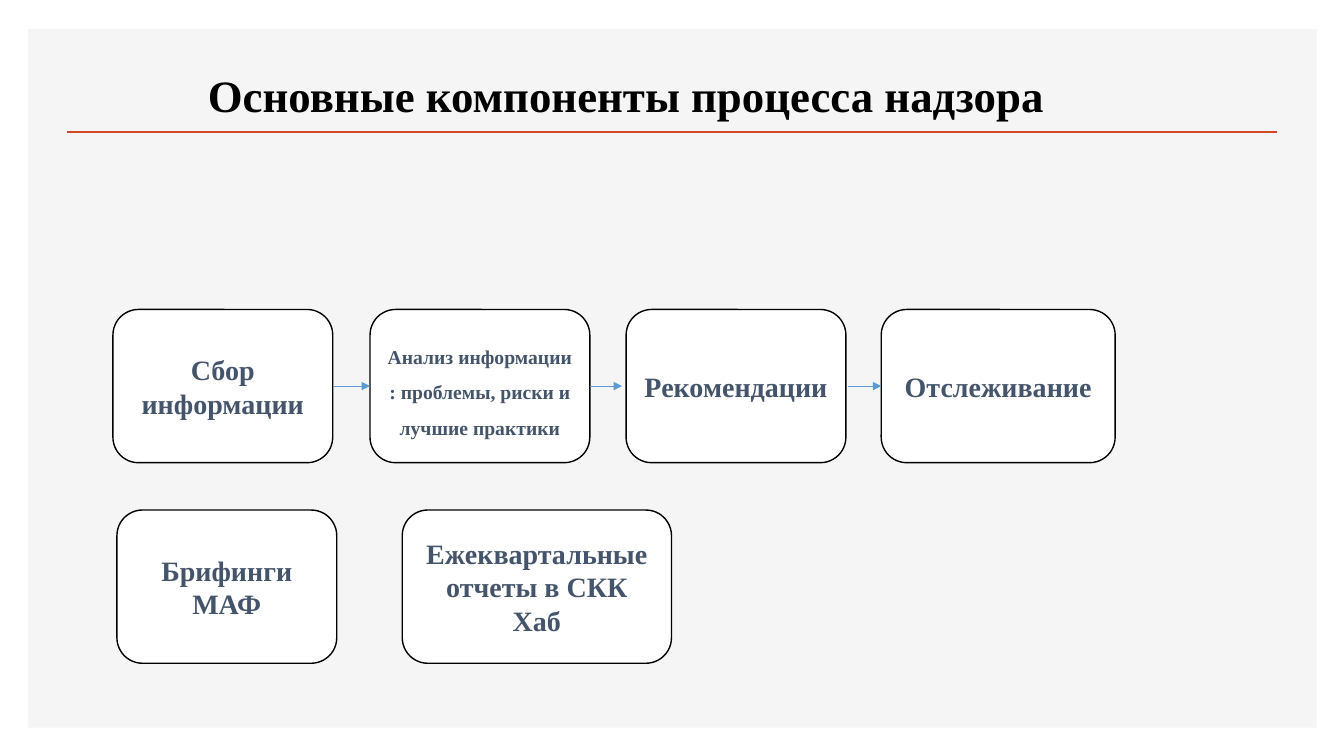
from dataclasses import dataclass

from lxml import etree
from pptx import Presentation
from pptx.dml.color import RGBColor
from pptx.enum.shapes import MSO_CONNECTOR, MSO_SHAPE
from pptx.enum.text import MSO_ANCHOR, PP_ALIGN
from pptx.oxml.ns import qn
from pptx.util import Inches, Pt

RECT = MSO_SHAPE.RECTANGLE
ROUNDED = MSO_SHAPE.ROUNDED_RECTANGLE
STRAIGHT = MSO_CONNECTOR.STRAIGHT
CENTER = PP_ALIGN.CENTER
MIDDLE = MSO_ANCHOR.MIDDLE
BOTTOM = MSO_ANCHOR.BOTTOM


@dataclass(frozen=True)
class Theme:
    """Colours and type sizes of the slide."""

    font: str = "Times New Roman"
    panel: str = "F5F5F5"
    accent: str = "D24726"
    title: str = "000000"
    card: str = "FFFFFF"
    border: str = "000000"
    label: str = "44546A"
    arrow: str = "5B9BD5"
    title_size: int = 32
    label_size: int = 20
    detail_size: int = 14


class SlideBuilder:
    """Draws styled elements on the current slide."""

    def __init__(self, slide, theme):
        self.slide = slide
        self.theme = theme

    def add_text(self, frame, text, size, color, anchor):
        frame.word_wrap = True
        frame.vertical_anchor = anchor
        paragraph = frame.paragraphs[0]
        paragraph.alignment = CENTER
        run = paragraph.add_run()
        run.text = text
        run.font.name = self.theme.font
        run.font.size = Pt(size)
        run.font.bold = True
        run.font.color.rgb = RGBColor.from_string(color)
        return paragraph

    def box(self, preset, left, top, width, height, fill):
        box = self.slide.shapes.add_shape(
            preset, Inches(left), Inches(top), Inches(width), Inches(height))
        box.shadow.inherit = False
        box.fill.solid()
        box.fill.fore_color.rgb = RGBColor.from_string(fill)
        box.line.fill.background()
        return box

    def panel(self, left, top, width, height):
        self.box(RECT, left, top, width, height, self.theme.panel)

    def title(self, text, left, top, width, height):
        heading = self.slide.shapes.add_textbox(
            Inches(left), Inches(top), Inches(width), Inches(height))
        self.add_text(heading.text_frame, text, self.theme.title_size,
                      self.theme.title, BOTTOM)

    def card(self, text, left, top, width, height, size):
        card = self.box(ROUNDED, left, top, width, height, self.theme.card)
        card.line.color.rgb = RGBColor.from_string(self.theme.border)
        card.line.width = Pt(1)
        return self.add_text(card.text_frame, text, size, self.theme.label,
                             MIDDLE)

    def line(self, start, end, y, color, weight):
        line = self.slide.shapes.add_connector(
            STRAIGHT, Inches(start), Inches(y), Inches(end), Inches(y))
        line.line.color.rgb = RGBColor.from_string(color)
        line.line.width = Pt(weight)
        etree.SubElement(line._element.spPr, qn("a:effectLst"))
        return line

    def arrow(self, start, end, y):
        arrow = self.line(start, end, y, self.theme.arrow, 0.5)
        outline = arrow._element.spPr.find(qn("a:ln"))
        etree.SubElement(outline, qn("a:tailEnd"), type="triangle")


def main():
    theme = Theme()
    deck = Presentation()
    deck.slide_width = Inches(13.33)
    deck.slide_height = Inches(7.5)
    builder = SlideBuilder(deck.slides.add_slide(deck.slide_layouts[6]), theme)

    builder.panel(0.28, 0.29, 12.78, 6.93)
    builder.line(0.66, 12.67, 1.31, theme.accent, 2)
    builder.title("Основные компоненты процесса надзора", 1, 0.48, 10.42, 0.77)

    process_top, reports_top = 3.07, 5.06
    card_width, card_height = 2.18, 1.52
    analysis = builder.card(
        "Анализ информации : проблемы, риски и лучшие практики",
        3.67, process_top, card_width, card_height, theme.detail_size)
    analysis.line_spacing = 1.5
    analysis.space_before = Pt(10)
    analysis.space_after = Pt(12)

    for label, left, top, width in (
        ("Сбор информации", 1.12, process_top, card_width),
        ("Рекомендации", 6.21, process_top, card_width),
        ("Отслеживание", 8.74, process_top, 2.32),
        ("Брифинги МАФ", 1.16, reports_top, card_width),
        ("Ежеквартальные отчеты в СКК Хаб", 3.99, reports_top, 2.67),
    ):
        builder.card(label, left, top, width, card_height, theme.label_size)

    for start, end in ((3.3, 3.67), (5.85, 6.17), (8.41, 8.74)):
        builder.arrow(start, end, process_top + card_height / 2)

    deck.save("out.pptx")


if __name__ == "__main__":
    main()
